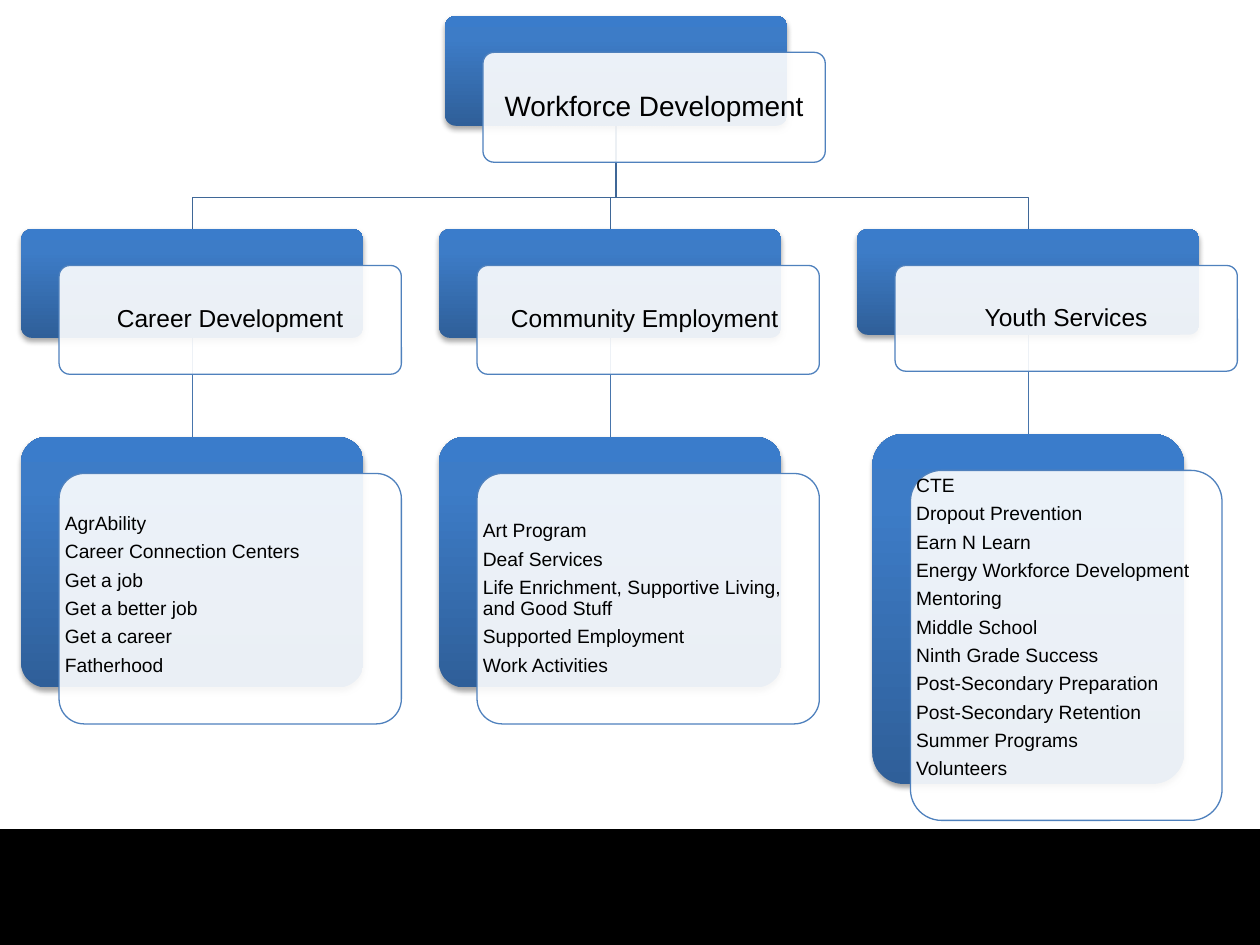
from lxml import etree
from pptx import Presentation
from pptx.dml.color import RGBColor
from pptx.enum.shapes import MSO_CONNECTOR, MSO_SHAPE
from pptx.enum.text import MSO_ANCHOR, PP_ALIGN
from pptx.oxml import parse_xml
from pptx.oxml.ns import nsdecls, qn
from pptx.util import Pt

RECTANGLE, ROUNDED = MSO_SHAPE.RECTANGLE, MSO_SHAPE.ROUNDED_RECTANGLE
STRAIGHT = MSO_CONNECTOR.STRAIGHT
LEFT, CENTER = PP_ALIGN.LEFT, PP_ALIGN.CENTER
MIDDLE = MSO_ANCHOR.MIDDLE

COLORS = {
    "bar": "000000", "text": "000000", "shadow": "000000",
    "panel": "FFFFFF", "outline": "4F81BD",
    "branch": "3F6797", "stem": "4875AC",
    "card bottom": "2F5F99", "card middle": "3D7CC7", "card top": "3A7CCB",
}
CARD_STOPS = ((0, "card bottom"), (80, "card middle"), (100, "card top"))
PANEL_SHIFT = (21.7, 20.8)


class OrgChart:
    font = "Arial"
    line_width = 0.75

    def __init__(self, slide):
        self.slide = slide

    def color(self, name):
        return RGBColor.from_string(COLORS[name])

    def style_line(self, line, name):
        line.color.rgb = self.color(name)
        line.width = Pt(self.line_width)

    def shape(self, kind, left, top, width, height):
        shape = self.slide.shapes.add_shape(kind, Pt(left), Pt(top), Pt(width), Pt(height))
        shape.shadow.inherit = False
        if kind == ROUNDED:
            shape.adjustments[0] = 0.1
        return shape

    def bar(self, left, top, width, height):
        shape = self.shape(RECTANGLE, left, top, width, height)
        shape.fill.solid()
        shape.fill.fore_color.rgb = self.color("bar")
        shape.line.fill.background()

    def stem(self, x, top, bottom):
        connector = self.slide.shapes.add_connector(STRAIGHT, Pt(x), Pt(top), Pt(x), Pt(bottom))
        self.style_line(connector.line, "stem")
        etree.SubElement(connector._element.spPr, qn("a:effectLst"))

    def branch(self, points):
        start, *others = [(Pt(x), Pt(y)) for x, y in points]
        builder = self.slide.shapes.build_freeform(*start)
        builder.add_line_segments(others, close=False)
        shape = builder.convert_to_shape()
        shape.shadow.inherit = False
        shape.fill.background()
        self.style_line(shape.line, "branch")

    def card(self, left, top, width, height):
        shape = self.shape(ROUNDED, left, top, width, height)
        shape.line.fill.background()
        properties = shape._element.spPr
        stops = "".join(
            f'<a:gs pos="{position * 1000}"><a:srgbClr val="{COLORS[name]}"/></a:gs>'
            for position, name in CARD_STOPS)
        gradient = parse_xml(
            f'<a:gradFill {nsdecls("a")} rotWithShape="1"><a:gsLst>{stops}</a:gsLst>'
            '<a:lin ang="16200000" scaled="0"/></a:gradFill>')
        properties.find(qn("a:prstGeom")).addnext(gradient)
        properties.find(qn("a:effectLst")).append(parse_xml(
            f'<a:outerShdw {nsdecls("a")} blurRad="{Pt(3.1)}" dist="{Pt(1.8)}" dir="5400000" '
            f'rotWithShape="0"><a:srgbClr val="{COLORS["shadow"]}"><a:alpha val="35000"/>'
            '</a:srgbClr></a:outerShdw>'))

    def panel(self, left, top, width, height):
        shape = self.shape(ROUNDED, left, top, width, height)
        shape.fill.solid()
        shape.fill.fore_color.rgb = self.color("panel")
        color = shape._element.spPr.find(qn("a:solidFill"))[0]
        etree.SubElement(color, qn("a:alpha"), val="90000")
        self.style_line(shape.line, "outline")

    def text(self, left, top, width, height, lines, size, align, inset, extra_bottom, gap):
        box = self.slide.shapes.add_textbox(Pt(left), Pt(top), Pt(width), Pt(height))
        frame = box.text_frame
        frame.word_wrap = True
        frame.vertical_anchor = MIDDLE
        frame.margin_left = frame.margin_right = frame.margin_top = Pt(inset)
        frame.margin_bottom = Pt(inset + extra_bottom)
        frame.text = "\n".join(lines)
        for paragraph in frame.paragraphs:
            paragraph.alignment = align
            paragraph.line_spacing = 0.9
            paragraph.space_after = Pt(gap)
            for run in paragraph.runs:
                run.font.name = self.font
                run.font.size = Pt(size)
                run.font.color.rgb = self.color("text")

    def node(self, left, top, width, height, lines, size,
             align=CENTER, inset=4.3, extra_bottom=0, gap=0):
        """A blue card with a shifted white panel that carries the text."""
        self.card(left, top, width, height)
        panel_place = (left + PANEL_SHIFT[0], top + PANEL_SHIFT[1], width, height)
        self.panel(*panel_place)
        self.text(*panel_place, lines, size, align, inset, extra_bottom, gap)


# Layout in points
NODE_WIDTH = 195.6
ROOT = (254.3, 9.1, NODE_WIDTH, 62.8)
ROOT_X, ROOT_BOTTOM = ROOT[0] + NODE_WIDTH / 2, ROOT[1] + ROOT[3]
BRANCH_Y, HEADING_TOP = 112.8, 130.9
COLUMN_LEFT, COLUMN_STEP = 12.1, 238.85
LIST_GAP = 56.7

# Heading, heading height, list size, space kept free below the list, items
DEPARTMENTS = [
    ("Career Development", 62.2, (NODE_WIDTH, 143.1), 4, [
        "AgrAbility", "Career Connection Centers", "Get a job",
        "Get a better job", "Get a career", "Fatherhood"]),
    ("Community Employment ", 62.2, (NODE_WIDTH, 143.1), 0, [
        "Art Program", "Deaf Services",
        "Life Enrichment, Supportive Living, and Good Stuff",
        "Supported Employment", "Work Activities"]),
    ("Youth Services", 60.4, (178.1, 200), 20, [
        "CTE", "Dropout Prevention", "Earn N Learn", "Energy Workforce Development",
        "Mentoring", "Middle School", "Ninth Grade Success",
        "Post-Secondary Preparation", "Post-Secondary Retention",
        "Summer Programs", "Volunteers"]),
]


def main():
    presentation = Presentation()
    presentation.slide_width, presentation.slide_height = Pt(720), Pt(540)
    chart = OrgChart(presentation.slides.add_slide(presentation.slide_layouts[6]))

    # Footer bar
    chart.bar(0, 473.8, 720, 66.2)

    # Connecting lines, behind the nodes
    centers = [COLUMN_LEFT + i * COLUMN_STEP + NODE_WIDTH / 2 for i in range(len(DEPARTMENTS))]
    for x, (_, height, *_) in zip(centers, DEPARTMENTS):
        heading_bottom = HEADING_TOP + height
        chart.stem(x, heading_bottom, heading_bottom + LIST_GAP)
        chart.branch([(ROOT_X, ROOT_BOTTOM), (ROOT_X, BRANCH_Y), (x, BRANCH_Y), (x, HEADING_TOP)])

    # Root, then each department with its list
    chart.node(*ROOT, ["Workforce Development"], 16, inset=4.8)
    for x, (heading, height, list_size, free, items) in zip(centers, DEPARTMENTS):
        chart.node(x - NODE_WIDTH / 2, HEADING_TOP, NODE_WIDTH, height, [heading], 14)
        chart.node(x - list_size[0] / 2, HEADING_TOP + height + LIST_GAP, *list_size, items, 11,
                   align=LEFT, inset=3.3, extra_bottom=free, gap=4.3)

    presentation.save("out.pptx")


if __name__ == "__main__":
    main()
